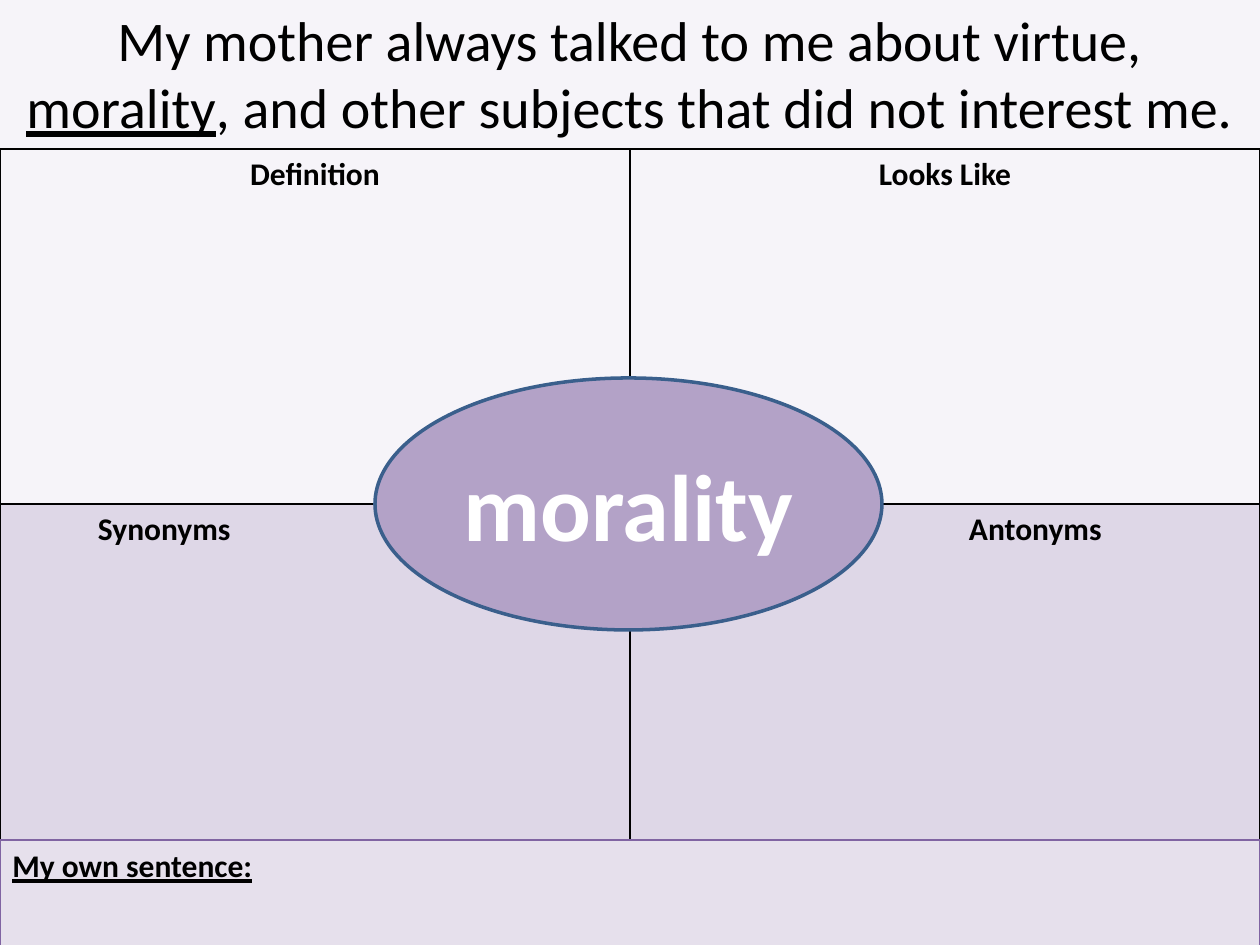
"""Build a vocabulary slide: a four-square organiser around one word."""
from dataclasses import dataclass

from lxml.etree import SubElement
from pptx import Presentation
from pptx.dml.color import RGBColor
from pptx.enum.shapes import MSO_SHAPE as Shape
from pptx.enum.text import MSO_ANCHOR as Anchor, MSO_AUTO_SIZE as AutoSize, PP_ALIGN as Align
from pptx.oxml.ns import qn
from pptx.util import Emu, Pt

SCALE = 914400 / 126


@dataclass(frozen=True)
class Theme:
    """Colours and type sizes of the slide."""
    font: str = "Calibri"
    ink: str = "000000"
    white: str = "FFFFFF"
    backdrop: str = "F6F4F9"
    pale: str = "E6E0EC"
    lilac: str = "B3A2C7"
    purple: str = "8064A2"
    blue: str = "3A5F8C"
    tint_alpha: int = 20
    title: int = 32
    label: int = 18
    word: int = 54


THEME = Theme()


def px(length):
    """Turn pixels into EMU."""
    return Emu(round(length * SCALE))


def place(shape, left, top, width, height):
    """Move and size a shape in pixels."""
    shape.left, shape.top, shape.width, shape.height = map(px, (left, top, width, height))


def style_text(para, size, color=THEME.ink, bold=False, align=Align.LEFT):
    """Format a paragraph and all its runs."""
    para.alignment = align
    for span in para.runs:
        font = span.font
        font.name, font.size, font.bold = THEME.font, Pt(size), bold
        font.color.rgb = RGBColor.from_string(color)


def set_background(page):
    """Fill the page with the backdrop colour."""
    fill = page.background.fill
    fill.solid()
    fill.fore_color.rgb = RGBColor.from_string(THEME.backdrop)


def add_sentence(page, before, word, after):
    """Write the example sentence in the title with its word underlined."""
    title = page.shapes.title
    place(title, 0, -1, 1260, 149)
    frame = title.text_frame
    frame.word_wrap, frame.auto_size = True, AutoSize.NONE
    frame.vertical_anchor = Anchor.TOP
    para = frame.paragraphs[0]
    for text in (before, word, after):
        span = para.add_run()
        span.text = text
        span.font.underline = text == word
    style_text(para, THEME.title, align=Align.CENTER)


def border_cell(cell):
    """Draw a thin line on all four sides of a cell."""
    properties = cell._tc.get_or_add_tcPr()
    for index, side in enumerate(("a:lnL", "a:lnR", "a:lnT", "a:lnB")):
        line = properties.makeelement(qn(side), {"w": str(Pt(1))})
        fill = SubElement(line, qn("a:solidFill"))
        SubElement(fill, qn("a:srgbClr"), val=THEME.ink)
        properties.insert(index, line)


def tint_cell(cell):
    """Fill a cell with translucent purple."""
    cell.fill.solid()
    cell.fill.fore_color.rgb = RGBColor.from_string(THEME.purple)
    color = cell._tc.tcPr.find(".//" + qn("a:srgbClr"))
    SubElement(color, qn("a:alpha"), val=str(THEME.tint_alpha * 1000))


def add_squares(page, rows, heights, indents):
    """Add the table: centred labels on top, tinted and indented ones below."""
    table = page.shapes.add_table(2, 2, px(0), px(149), px(1260), px(sum(heights))).table
    table.first_row = table.horz_banding = False
    for row, height in zip(table.rows, heights):
        row.height = px(height)
    for row_index, labels in enumerate(rows):
        for column, label in enumerate(labels):
            cell = table.cell(row_index, column)
            cell.text = label
            align = Align.LEFT if row_index else Align.CENTER
            style_text(cell.text_frame.paragraphs[0], THEME.label, bold=True, align=align)
            if row_index:
                tint_cell(cell)
                cell.margin_left = px(indents[column])
            else:
                cell.fill.background()
            border_cell(cell)


def add_panel(page, kind, bounds, fill, line, weight, text):
    """Add a filled, outlined shape with text and return it."""
    panel = page.shapes.add_shape(kind, *map(px, bounds))
    panel.shadow.inherit = False
    panel.fill.solid()
    panel.fill.fore_color.rgb = RGBColor.from_string(fill)
    panel.line.color.rgb = RGBColor.from_string(line)
    panel.line.width = Pt(weight)
    panel.text_frame.word_wrap = True
    panel.text_frame.text = text
    return panel


def add_own_sentence(page, text):
    """Add the strip for the pupil's sentence."""
    strip = add_panel(page, Shape.RECTANGLE, (0, 840, 1260, 127),
                      THEME.pale, THEME.purple, 0.75, text)
    strip.text_frame.vertical_anchor = Anchor.TOP
    para = strip.text_frame.paragraphs[0]
    style_text(para, THEME.label, bold=True)
    para.runs[0].font.underline = True


def add_word(page, word):
    """Add the central oval with the word."""
    oval = add_panel(page, Shape.OVAL, (375, 378, 507, 252),
                     THEME.lilac, THEME.blue, 2, word)
    oval.text_frame.vertical_anchor = Anchor.MIDDLE
    style_text(oval.text_frame.paragraphs[0], THEME.word, THEME.white, True, Align.CENTER)


def main():
    """Build and save the deck."""
    deck = Presentation()
    deck.slide_width, deck.slide_height = px(1260), px(945)
    page = deck.slides.add_slide(deck.slide_layouts[5])
    word = "morality"
    set_background(page)
    add_sentence(page, "My mother always talked to me about virtue, ", word,
                 ", and other subjects that did not interest me.")
    add_squares(page, (("Definition", "Looks Like"), ("Synonyms", "Antonyms")),
                heights=(355, 393), indents=(98, 339))
    add_own_sentence(page, "My own sentence:")
    add_word(page, word)
    deck.save("out.pptx")


if __name__ == "__main__":
    main()
